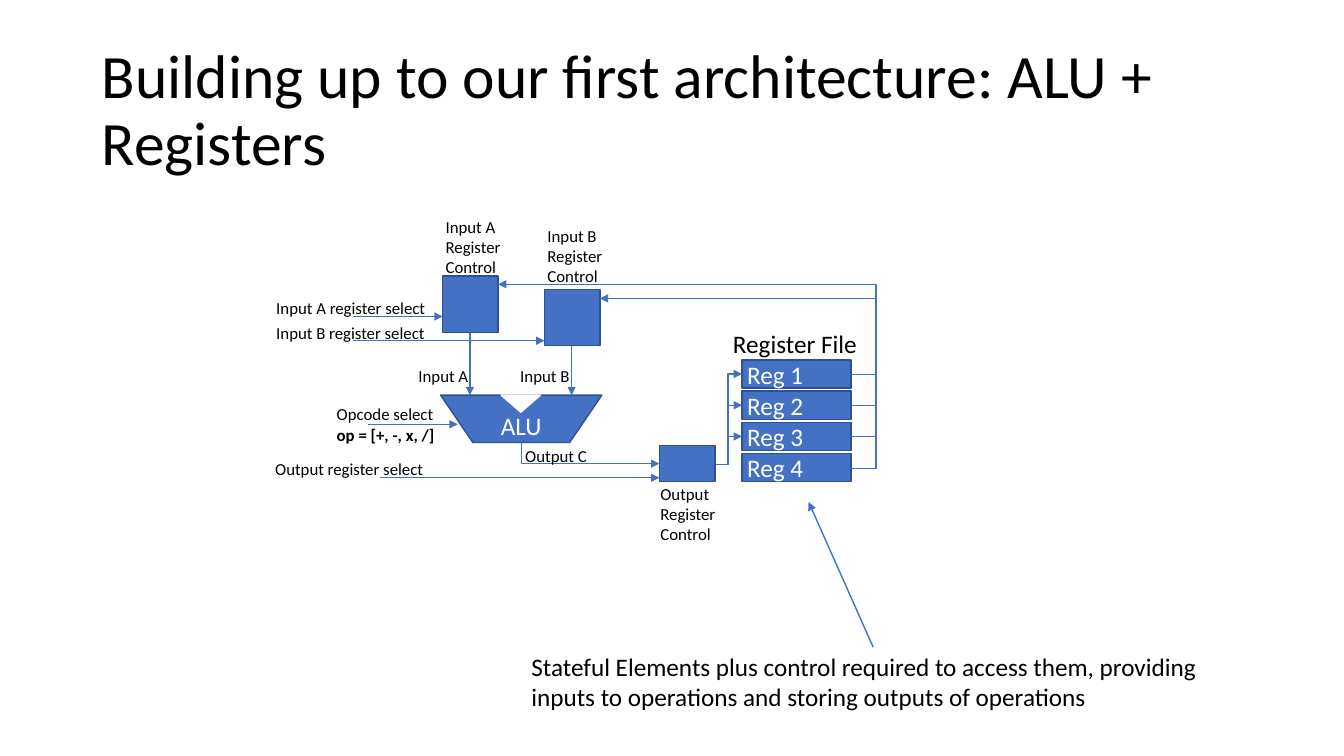
from pptx import Presentation
from pptx.dml.color import RGBColor
from pptx.enum.shapes import MSO_CONNECTOR as Link, MSO_SHAPE as Preset
from pptx.enum.text import MSO_ANCHOR as Anchor, PP_ALIGN as Align
from pptx.oxml.ns import qn
from pptx.util import Inches, Pt
from lxml.etree import SubElement

COLORS = {"fill": "4471C4", "edge": "2E528F", "ink": "000000", "paper": "FFFFFF"}


class Diagram:
    """Draws titles, labels, blocks and wires in one style on a slide."""

    def __init__(self, slide, font="Calibri"):
        self.slide = slide
        self.font = font

    def color(self, name):
        return RGBColor.from_string(COLORS[name])

    def set_text(self, frame, text, size, ink="ink", left=0, top=0, align=Align.LEFT,
                 anchor=Anchor.TOP):
        frame.word_wrap = True
        frame.vertical_anchor = anchor
        frame.margin_left, frame.margin_top = Inches(left), Inches(top)
        frame.margin_right = frame.margin_bottom = 0
        frame.text = text
        for paragraph in frame.paragraphs:
            paragraph.alignment = align
            for run in paragraph.runs:
                run.font.name, run.font.size = self.font, Pt(size)
                run.font.color.rgb = self.color(ink)

    def title(self, text, x, y, width, height):
        heading = self.slide.shapes.title
        heading.left, heading.top = Inches(x), Inches(y)
        heading.width, heading.height = Inches(width), Inches(height)
        self.set_text(heading.text_frame, text, 44, top=0.17)
        heading.text_frame.paragraphs[0].line_spacing = Pt(47.5)
        heading.text_frame.paragraphs[0].space_before = Pt(7)

    def label(self, text, x, y, width=1.6, size=12):
        height = 0.017 * size * (text.count("\n") + 1)
        box = self.slide.shapes.add_textbox(
            Inches(x), Inches(y), Inches(width), Inches(height))
        self.set_text(box.text_frame, text, size)
        return box.text_frame

    def block(self, x, y, width, height, preset=Preset.RECTANGLE, fill="fill",
              edge="edge"):
        block = self.slide.shapes.add_shape(
            preset, Inches(x), Inches(y), Inches(width), Inches(height))
        block.shadow.inherit = False
        block.fill.solid()
        block.fill.fore_color.rgb = self.color(fill)
        block.line.color.rgb = self.color(edge)
        block.line.width = Pt(1)
        return block.text_frame

    def wire(self, *points, arrow=True, weight=1.0):
        start, *rest = [(Inches(x), Inches(y)) for x, y in points]
        if len(rest) == 1:
            wire = self.slide.shapes.add_connector(Link.STRAIGHT, *start, *rest[0])
        else:
            builder = self.slide.shapes.build_freeform(*start, scale=1.0)
            builder.add_line_segments(rest, close=False)
            wire = builder.convert_to_shape()
            wire.fill.background()
            wire.shadow.inherit = False
        wire.line.color.rgb = self.color("fill")
        wire.line.width = Pt(weight)
        properties = wire._element.spPr
        if arrow:
            SubElement(properties.find(qn("a:ln")), qn("a:tailEnd"), type="triangle")
        if properties.find(qn("a:effectLst")) is None:
            SubElement(properties, qn("a:effectLst"))


def main():
    deck = Presentation()
    deck.slide_width, deck.slide_height = Inches(13.33), Inches(7.5)
    diagram = Diagram(deck.slides.add_slide(deck.slide_layouts[5]))
    diagram.title("Building up to our first architecture: ALU + Registers",
                  1.01, 0.27, 11.84, 1.49)

    alu = diagram.block(4.37, 3.92, 1.6, 0.47, Preset.FLOWCHART_MANUAL_OPERATION)
    diagram.set_text(alu, "ALU", 18, "paper", top=0.13, align=Align.CENTER,
                     anchor=Anchor.MIDDLE)
    diagram.block(4.97, 3.92, 0.39, 0.17, Preset.FLOWCHART_MERGE, "paper", "paper")

    bus_x, branch_x, file_x, file_right = 8.69, 7.22, 7.36, 8.44
    register_centers = [3.71 + 0.31 * row for row in range(4)]
    for number, center in enumerate(register_centers, 1):
        register = diagram.block(file_x, center - 0.14, file_right - file_x, 0.28)
        diagram.set_text(register, f"Reg {number}", 18, "paper", left=0.05,
                         anchor=Anchor.MIDDLE)
    for center in register_centers[:3]:
        diagram.wire((7.09, 4.61), (branch_x, 4.61), (branch_x, center),
                     (file_x, center))
        diagram.wire((file_right, center), (bus_x, center), arrow=False, weight=0.5)

    inputs = [("A", 4.39, 2.74, 2.82, 3.14, 2.15, 2.95),
              ("B", 5.40, 2.87, 2.96, 3.38, 2.24, 3.20)]
    for name, x, top, feed_y, select_y, caption_y, select_label_y in inputs:
        middle = x + 0.27
        diagram.block(x, top, 0.55, 0.56)
        diagram.wire((file_right, 4.65), (bus_x, 4.65), (bus_x, feed_y),
                     (x + 0.55, feed_y))
        diagram.wire((3.5, select_y), (x, select_y))
        diagram.wire((middle, top + 0.56), (middle, 3.92))
        diagram.label(f"Input {name}\nRegister\nControl", x + 0.03, caption_y, 0.7)
        diagram.label(f"Input {name}", x - 0.24, 3.63, 0.52)
        diagram.label(f"Input {name} register select", 2.74, select_label_y)

    diagram.block(6.54, 4.42, 0.55, 0.36)
    diagram.wire((5.17, 4.39), (5.17, 4.6), (6.54, 4.6))
    diagram.wire((3.77, 4.74), (6.54, 4.74))
    diagram.wire((3.65, 4.21), (4.54, 4.21))
    diagram.wire((8.66, 6.42), (8.02, 4.98))

    opcode = diagram.label("Opcode select\nop = [+, -, x, /]", 3.34, 4.01, 1.1)
    opcode.paragraphs[1].runs[0].font.bold = True
    diagram.label("Output C", 5.21, 4.42, 0.8)
    diagram.label("Output register select", 2.73, 4.55)
    diagram.label("Output\nRegister\nControl", 6.55, 4.8, 0.7)
    diagram.label("Register File", 7.27, 3.26, 1.4, 18)
    diagram.label("Stateful Elements plus control required to access them, providing "
                  "inputs to operations and storing outputs of operations",
                  5.27, 6.46, 6.75, 18)
    deck.save("out.pptx")


if __name__ == "__main__":
    main()
